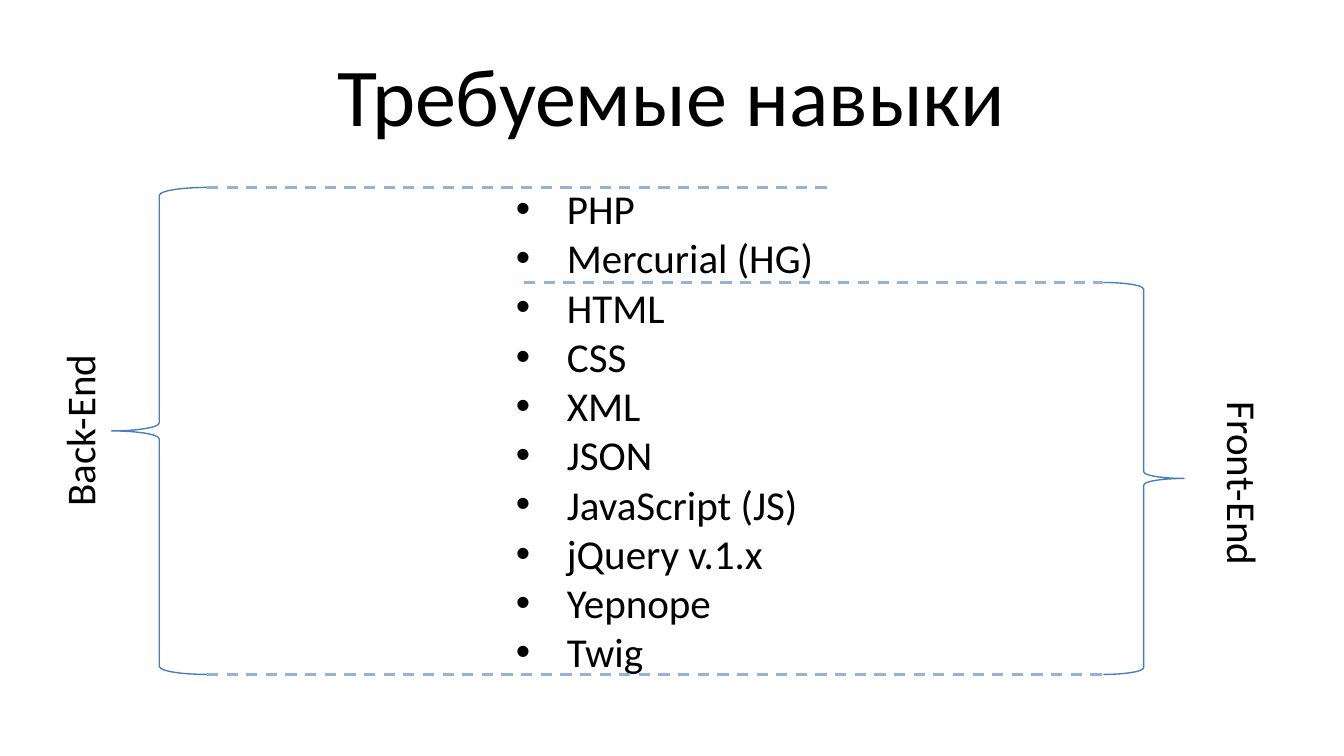
from pptx import Presentation
from pptx.dml.color import RGBColor
from pptx.enum.dml import MSO_LINE_DASH_STYLE as Dash
from pptx.enum.shapes import MSO_CONNECTOR as Connector, MSO_SHAPE as Shape
from pptx.enum.text import MSO_ANCHOR as Anchor, MSO_AUTO_SIZE as Fit, PP_ALIGN as Align
from pptx.oxml.ns import qn
from pptx.util import Inches, Pt
from lxml.etree import SubElement

HEADING = "Требуемые навыки"
SKILLS = ["PHP", "Mercurial (HG)", "HTML", "CSS", "XML", "JSON",
          "JavaScript (JS)", "jQuery v.1.x", "Yepnope", "Twig"]

TOP, SPLIT, BOTTOM = 24.8, 37.37, 89.22
BACK_EDGE, FRONT_EDGE = 15.4, 82.1
LIST_LEFT, LIST_WIDTH = 37.4, 24.3
LIST_RIGHT = LIST_LEFT + LIST_WIDTH

SIDES = [
    {"label": "Back-End", "area": (-0.9, 52.8, 13.6, 8.35), "turn": 270,
     "brace": Shape.LEFT_BRACE, "span": (8.3, TOP, BACK_EDGE - 8.3, BOTTOM - TOP)},
    {"label": "Front-End", "area": (85.3, 59.78, 14.4, 8.35), "turn": 90,
     "brace": Shape.RIGHT_BRACE, "span": (FRONT_EDGE, SPLIT, 6, BOTTOM - SPLIT)},
]
BOUNDARIES = [
    (39, SPLIT, FRONT_EDGE, SPLIT),
    (BACK_EDGE, BOTTOM, FRONT_EDGE, BOTTOM),
    (BACK_EDGE, TOP, LIST_RIGHT, TOP),
]

THEME = {
    "heading": {"name": "Calibri", "size": Pt(44), "color": "000000"},
    "body": {"name": "Calibri", "size": Pt(22), "color": "000000"},
    "brace": {"width": Pt(0.75), "color": "4B7EBC"},
    "boundary": {"width": Pt(1.5), "dash_style": Dash.DASH, "color": "95B3D7"},
}
GROWING = {"word_wrap": False, "auto_size": Fit.SHAPE_TO_FIT_TEXT}
CENTRED = {"word_wrap": True, "vertical_anchor": Anchor.MIDDLE}

deck = Presentation()
deck.slide_width = Inches(10)
deck.slide_height = deck.slide_width * 9 // 16
slide = deck.slides.add_slide(deck.slide_layouts[6])


def place(*shares):
    sizes = (deck.slide_width, deck.slide_height) * 2
    return [round(size * share / 100) for size, share in zip(sizes, shares)]


def apply(target, values):
    for key, value in values.items():
        if key == "color":
            target.color.rgb = RGBColor.from_string(value)
        else:
            setattr(target, key, value)


def add_bullet(paragraph):
    properties = paragraph._p.get_or_add_pPr()
    properties.set("marL", str(Inches(0.38)))
    properties.set("indent", str(Inches(-0.38)))
    SubElement(properties, qn("a:buFont")).set("typeface", "Arial")
    SubElement(properties, qn("a:buChar")).set("char", "•")


def write(lines, area, style, frame, align=Align.CENTER, bulleted=False, turn=0):
    box = slide.shapes.add_textbox(*place(*area))
    box.rotation = turn
    apply(box.text_frame, frame)
    box.text_frame.text = "\n".join(lines)
    for paragraph in box.text_frame.paragraphs:
        paragraph.alignment = align
        if bulleted:
            add_bullet(paragraph)
        for run in paragraph.runs:
            apply(run.font, THEME[style])


write([HEADING], (5, 4.05, 90, 16.67), "heading", CENTRED)
for side in SIDES:
    write([side["label"]], side["area"], "body", GROWING, turn=side["turn"])
write(SKILLS, (LIST_LEFT, 23.4, LIST_WIDTH, 67.56), "body", GROWING, Align.LEFT, bulleted=True)

for side in SIDES:
    brace = slide.shapes.add_shape(side["brace"], *place(*side["span"]))
    brace.shadow.inherit = False
    brace.fill.background()
    apply(brace.line, THEME["brace"])

for ends in BOUNDARIES:
    boundary = slide.shapes.add_connector(Connector.STRAIGHT, *place(*ends))
    apply(boundary.line, THEME["boundary"])
    SubElement(boundary._element.spPr, qn("a:effectLst"))

deck.save("out.pptx")
